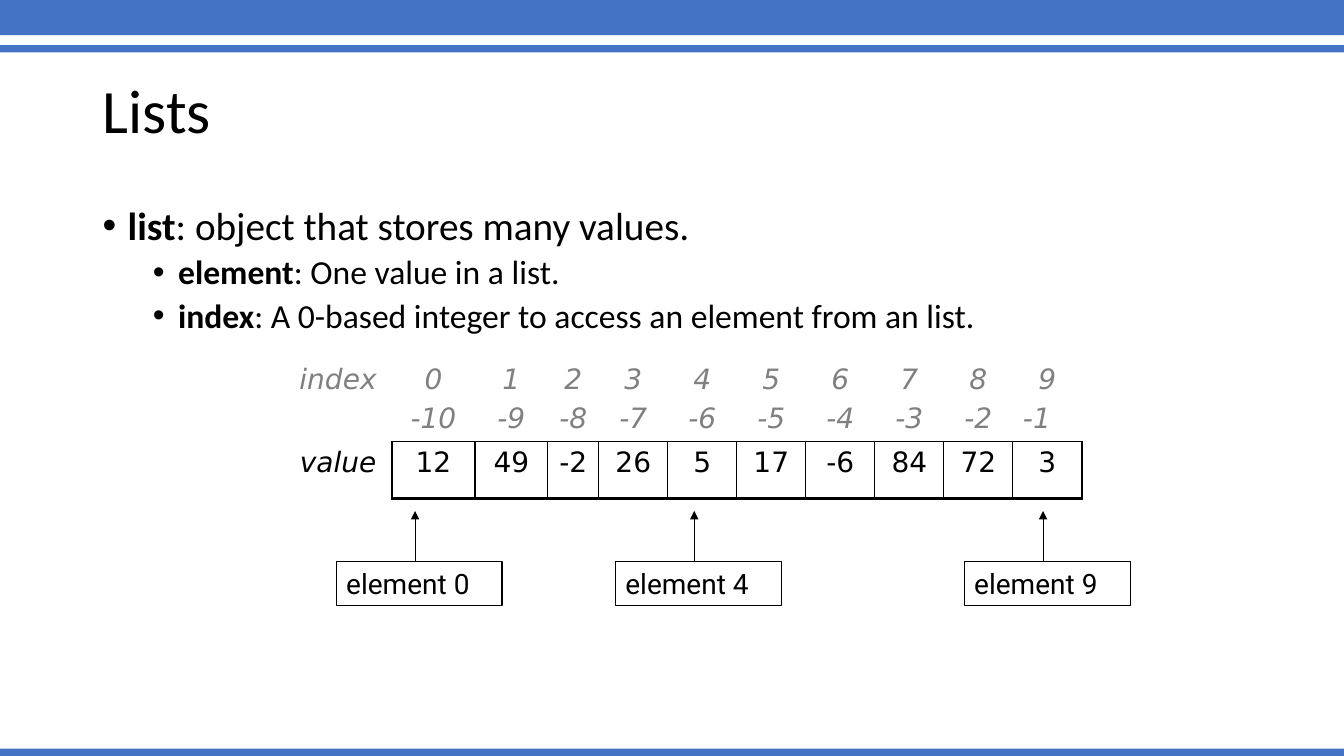
from dataclasses import dataclass

from lxml.etree import SubElement
from pptx import Presentation
from pptx.dml.color import RGBColor
from pptx.enum.shapes import MSO_CONNECTOR, MSO_SHAPE
from pptx.enum.text import MSO_ANCHOR, MSO_AUTO_SIZE, PP_ALIGN
from pptx.oxml.ns import qn
from pptx.slide import Slide
from pptx.text.text import Font
from pptx.util import Pt


@dataclass(frozen=True)
class Theme:
    accent: RGBColor = RGBColor(0x44, 0x72, 0xC4)
    ink: RGBColor = RGBColor(0, 0, 0)
    muted: RGBColor = RGBColor(0x80, 0x80, 0x80)
    text_font: str = "Calibri"
    table_font: str = "DejaVu Sans"
    label_font: str = "Roboto"
    title_size: float = 44
    bullet_sizes: tuple[float, ...] = (28, 24)
    small_size: float = 20
    thin: float = 1
    thick: float = 2.25
    hairline: float = 0.75


@dataclass(frozen=True)
class Bar:
    top: float
    height: float


@dataclass(frozen=True)
class Definition:
    term: str
    meaning: str
    level: int


@dataclass(frozen=True)
class Callout:
    text: str
    left: float


THEME = Theme()
SLIDE_WIDTH, SLIDE_HEIGHT = 960, 540
BODY_LEFT, BODY_WIDTH = 66.2, 828

BARS = (Bar(0, 25.2), Bar(32.2, 5.2), Bar(534.8, 5.2))
DEFINITIONS = (
    Definition("list", ": object that stores many values.", 0),
    Definition("element", ": One value in a list.", 1),
    Definition("index", ": A 0-based integer to access an element from an list.", 1),
)
VALUES = (12, 49, -2, 26, 5, 17, -6, 84, 72, 3)
COLUMN_WIDTHS = (77, 59.3, 52.1, 36.4) + (49.3,) * 7
ROW_HEIGHTS = (57.4, 40.6)
TABLE_LEFT, TABLE_TOP = 203, 256.3
CALLOUTS = (
    Callout("element 0", 240.2),
    Callout("element 4", 439.6),
    Callout("element 9", 688.8),
)
CALLOUT_TOP, CALLOUT_WIDTH, CALLOUT_HEIGHT = 400.8, 118.4, 32
ARROW_OFFSET, ARROW_TOP = 56.3, 365


def set_font(font: Font, name: str, size: float, color: RGBColor = THEME.ink) -> None:
    font.name = name
    font.size = Pt(size)
    font.color.rgb = color


def add_bar(slide: Slide, bar: Bar) -> None:
    shape = slide.shapes.add_shape(
        MSO_SHAPE.RECTANGLE, 0, Pt(bar.top), Pt(SLIDE_WIDTH), Pt(bar.height))
    shape.shadow.inherit = False
    shape.fill.solid()
    shape.fill.fore_color.rgb = THEME.accent
    shape.line.fill.background()


def format_title(slide: Slide, text: str) -> None:
    title = slide.shapes.title
    title.left, title.top = Pt(BODY_LEFT), Pt(28.8)
    title.width, title.height = Pt(BODY_WIDTH), Pt(104.4)
    frame = title.text_frame
    frame.text = text
    frame.auto_size = MSO_AUTO_SIZE.NONE
    frame.vertical_anchor = MSO_ANCHOR.MIDDLE
    paragraph = frame.paragraphs[0]
    paragraph.alignment = PP_ALIGN.LEFT
    paragraph.line_spacing = 0.9
    set_font(paragraph.font, THEME.text_font, THEME.title_size)


def add_definitions(slide: Slide, definitions: tuple[Definition, ...]) -> None:
    box = slide.shapes.add_textbox(Pt(BODY_LEFT), Pt(144), Pt(BODY_WIDTH), Pt(104))
    frame = box.text_frame
    frame.word_wrap = True
    for number, definition in enumerate(definitions):
        paragraph = frame.add_paragraph() if number else frame.paragraphs[0]
        paragraph.level = definition.level
        properties = paragraph._p.get_or_add_pPr()
        properties.set("marL", str(Pt(18 + 36 * definition.level)))
        properties.set("indent", str(Pt(-18)))
        SubElement(properties, qn("a:buFont"), typeface="Arial")
        SubElement(properties, qn("a:buChar"), char="•")
        paragraph.line_spacing = 0.9
        paragraph.space_before = Pt(5 if definition.level else 10)
        set_font(paragraph.font, THEME.text_font, THEME.bullet_sizes[definition.level])
        for text, bold in ((definition.term, True), (definition.meaning, False)):
            run = paragraph.add_run()
            run.text = text
            run.font.bold = bold


def border_widths(row: int, column: int) -> dict[str, float]:
    """Return the widths of the visible borders of a cell, by side."""
    if column == 0:
        return {"R": THEME.thin} if row else {}
    if row == 0:
        return {"B": THEME.thin}
    last = column == len(VALUES)
    return {"L": THEME.thin, "R": THEME.thick if last else THEME.thin,
            "T": THEME.thin, "B": THEME.thick}


def set_borders(properties, widths: dict[str, float]) -> None:
    for side in "LRTB":
        line = SubElement(properties, qn(f"a:ln{side}"), w=str(Pt(widths.get(side, 0))))
        if side in widths:
            fill = SubElement(line, qn("a:solidFill"))
            SubElement(fill, qn("a:srgbClr"), val=str(THEME.ink))
        else:
            SubElement(line, qn("a:noFill"))


def add_value_table(slide: Slide) -> None:
    count = len(VALUES)
    texts = ["index", *(f"{index}\n{index - count}" for index in range(count)),
             "value", *map(str, VALUES)]
    graphic = slide.shapes.add_table(
        2, count + 1, Pt(TABLE_LEFT), Pt(TABLE_TOP),
        Pt(sum(COLUMN_WIDTHS)), Pt(sum(ROW_HEIGHTS)))
    table = graphic.table
    table.first_row = table.horz_banding = False
    for column, width in zip(table.columns, COLUMN_WIDTHS):
        column.width = Pt(width)
    for row, height in zip(table.rows, ROW_HEIGHTS):
        row.height = Pt(height)

    elements = graphic.element.iter(qn("a:tc"))
    for position, (cell, element, text) in enumerate(
            zip(table.iter_cells(), elements, texts)):
        row, column = divmod(position, count + 1)
        set_borders(element.get_or_add_tcPr(), border_widths(row, column))
        cell.fill.background()
        cell.text = text
        for paragraph in cell.text_frame.paragraphs:
            paragraph.alignment = PP_ALIGN.LEFT if paragraph.text == "-1" else PP_ALIGN.CENTER
            paragraph.space_before = Pt(4)
            paragraph.font.italic = row == 0 or column == 0
            set_font(paragraph.font, THEME.table_font, THEME.small_size,
                     THEME.ink if row else THEME.muted)


def add_callout(slide: Slide, callout: Callout) -> None:
    arrow_x = Pt(callout.left + ARROW_OFFSET)
    arrow = slide.shapes.add_connector(
        MSO_CONNECTOR.STRAIGHT, arrow_x, Pt(CALLOUT_TOP), arrow_x, Pt(ARROW_TOP))
    arrow.line.color.rgb = THEME.ink
    arrow.line.width = Pt(THEME.hairline)
    properties = arrow.element.spPr
    SubElement(properties.find(qn("a:ln")), qn("a:tailEnd"), type="triangle")
    SubElement(properties, qn("a:effectLst"))

    box = slide.shapes.add_shape(
        MSO_SHAPE.RECTANGLE, Pt(callout.left), Pt(CALLOUT_TOP),
        Pt(CALLOUT_WIDTH), Pt(CALLOUT_HEIGHT))
    box.shadow.inherit = False
    box.fill.background()
    box.line.color.rgb = THEME.ink
    box.line.width = Pt(THEME.hairline)
    frame = box.text_frame
    frame.text = callout.text
    frame.word_wrap = True
    frame.vertical_anchor = MSO_ANCHOR.TOP
    paragraph = frame.paragraphs[0]
    paragraph.alignment = PP_ALIGN.LEFT
    set_font(paragraph.font, THEME.label_font, THEME.small_size)


def main() -> None:
    presentation = Presentation()
    presentation.slide_width = Pt(SLIDE_WIDTH)
    presentation.slide_height = Pt(SLIDE_HEIGHT)
    slide = presentation.slides.add_slide(presentation.slide_layouts.get_by_name("Title Only"))
    for bar in BARS:
        add_bar(slide, bar)
    format_title(slide, "Lists")
    add_definitions(slide, DEFINITIONS)
    add_value_table(slide)
    for callout in CALLOUTS:
        add_callout(slide, callout)
    presentation.save("out.pptx")


if __name__ == "__main__":
    main()
